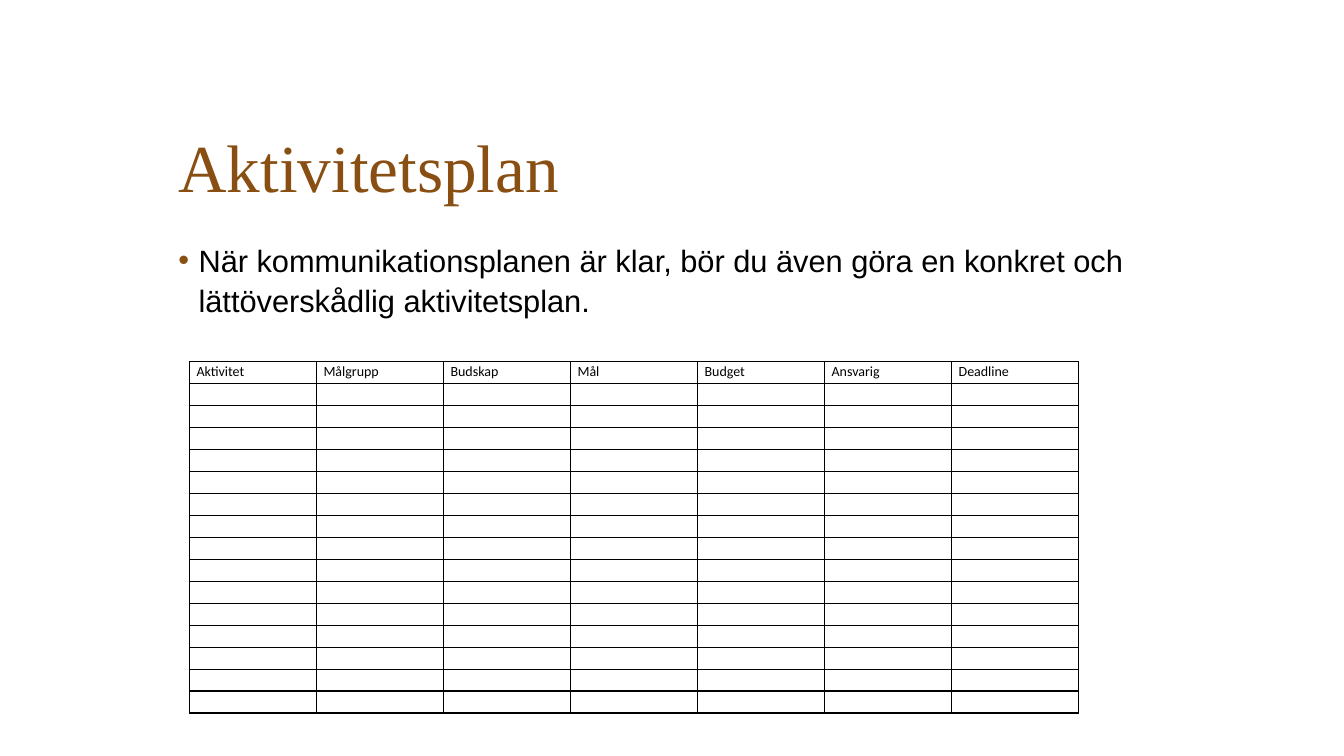
from dataclasses import dataclass

from lxml import etree
from pptx import Presentation
from pptx.dml.color import RGBColor
from pptx.enum.text import MSO_ANCHOR, MSO_AUTO_SIZE, PP_ALIGN
from pptx.oxml.ns import qn
from pptx.util import Inches, Pt

LEFT = PP_ALIGN.LEFT
TOP, BOTTOM = MSO_ANCHOR.TOP, MSO_ANCHOR.BOTTOM
NO_FIT = MSO_AUTO_SIZE.NONE
TITLE_ONLY = 5
SIDES = ("a:lnL", "a:lnR", "a:lnT", "a:lnB")

HEADS = ("Aktivitet", "Målgrupp", "Budskap", "Mål", "Budget", "Ansvarig", "Deadline")
ROWS = 16


@dataclass(frozen=True)
class Theme:
    brown: str = "894E11"
    black: str = "000000"
    white: str = "FFFFFF"
    serif: str = "Times New Roman"
    sans: str = "Arial"
    small: str = "Calibri"
    title: int = 48
    body: int = 22
    cell: int = 10


def node(parent, tag, **attrs):
    return etree.SubElement(parent, qn(tag), attrs)


class Deck:
    """Holds the theme and the current slide; boxes are in percent of its size."""

    def __init__(self, theme):
        self.theme = theme
        self.prs = Presentation()
        self.prs.slide_width, self.prs.slide_height = Inches(13.33), Inches(7.5)
        self.slide = self.prs.slides.add_slide(self.prs.slide_layouts[TITLE_ONLY])
        fill = self.slide.background.fill
        fill.solid()
        fill.fore_color.rgb = RGBColor.from_string(theme.white)

    def box(self, x, y, w, h):
        wide, high = self.prs.slide_width, self.prs.slide_height
        return [int(part * size / 100) for part, size in zip((x, y, w, h), (wide, high) * 2)]

    def label(self, frame, text, font, size, color):
        frame.text = text
        para = frame.paragraphs[0]
        para.alignment = LEFT
        for run in para.runs:
            run.font.name, run.font.size = font, Pt(size)
            run.font.color.rgb = RGBColor.from_string(color)
        return para

    def frame(self, shape, anchor, foot=0):
        frame = shape.text_frame
        frame.word_wrap, frame.auto_size = True, NO_FIT
        frame.vertical_anchor = anchor
        frame.margin_left = frame.margin_top = frame.margin_right = 0
        frame.margin_bottom = Inches(foot)
        return frame

    def title(self, text, *box):
        shape = self.slide.shapes.title
        shape.left, shape.top, shape.width, shape.height = self.box(*box)
        look = self.theme
        para = self.label(self.frame(shape, BOTTOM, 0.31), text,
                          look.serif, look.title, look.brown)
        para.line_spacing = 0.9

    def bullet(self, text, *box):
        shape = self.slide.shapes.add_textbox(*self.box(*box))
        look = self.theme
        para = self.label(self.frame(shape, TOP), text, look.sans, look.body, look.black)
        para.line_spacing, para.space_before = 1.1, Pt(12)
        props = para._p.get_or_add_pPr()
        props.set("marL", str(Inches(0.2)))
        props.set("indent", str(Inches(-0.2)))
        node(node(props, "a:buClr"), "a:srgbClr", val=look.brown)
        node(props, "a:buFont", typeface=look.sans)
        node(props, "a:buChar", char="•")

    def table(self, heads, rows, *box):
        """Adds a ruled table with a row of heads above empty rows."""
        x, y, w, h = self.box(*box)
        table = self.slide.shapes.add_table(rows, len(heads), x, y, w, h).table
        table.first_row = table.horz_banding = False
        for col in table.columns:
            col.width = w // len(heads)
        for row in table.rows:
            row.height = h // rows
        for i, cell in enumerate(table.iter_cells()):
            self.cell(cell, heads[i] if i < len(heads) else "")

    def cell(self, cell, text):
        look = self.theme
        cell.margin_left = cell.margin_right = Inches(0.07)
        cell.margin_top = cell.margin_bottom = 0
        para = self.label(cell.text_frame, text, look.small, look.cell, look.black)
        para.line_spacing, para.space_after = Pt(13), Pt(6)
        if not text:
            node(para._p, "a:endParaRPr", sz=str(look.cell * 100))
        props = cell._tc.get_or_add_tcPr()
        for side in SIDES:
            line = node(props, side, w=str(Pt(1)))
            node(node(line, "a:solidFill"), "a:srgbClr", val=look.black)
        cell.fill.background()


def main():
    deck = Deck(Theme())
    deck.title("Aktivitetsplan", 13.28, 5.2, 72.39, 26.27)
    deck.bullet("När kommunikationsplanen är klar, bör du även göra en konkret och "
                "lättöverskådlig aktivitetsplan.", 13.28, 31.47, 72.39, 57.73)
    deck.table(HEADS, ROWS, 14.1, 47.87, 66.17, 46.53)
    deck.prs.save("out.pptx")


if __name__ == "__main__":
    main()
